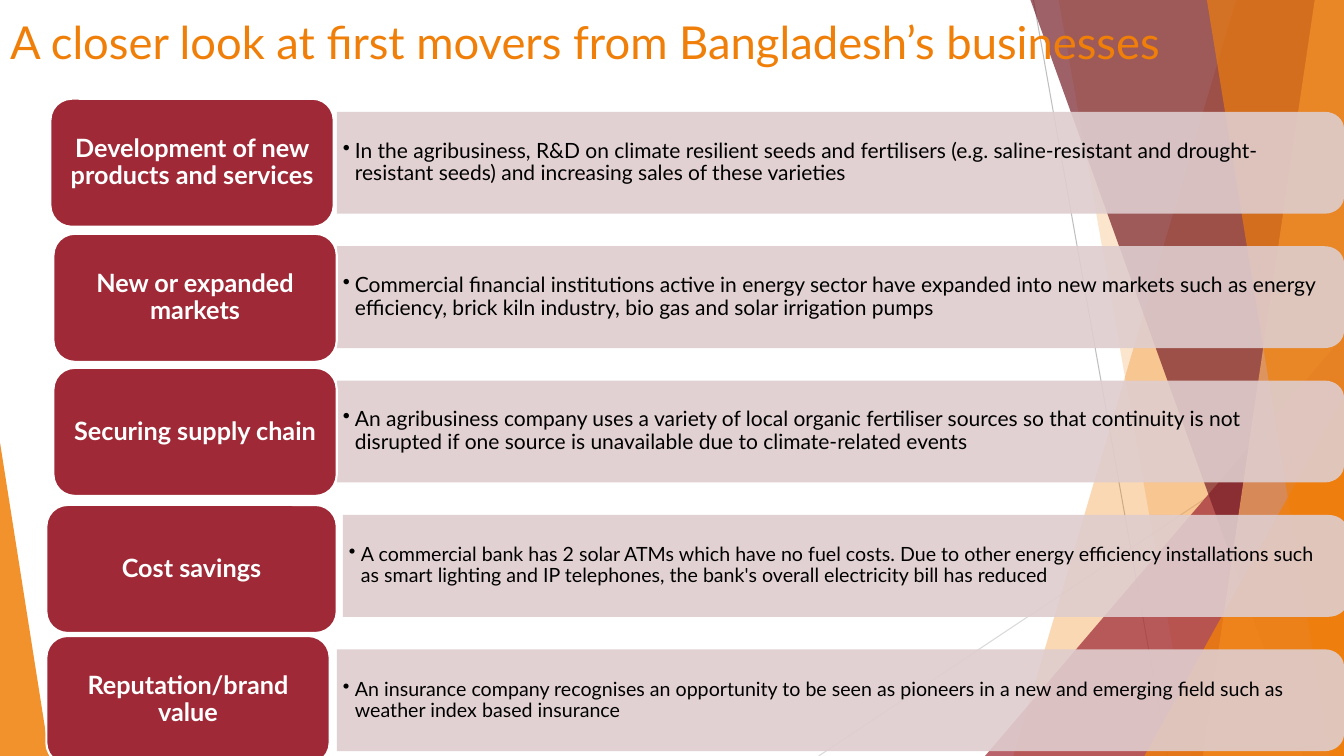
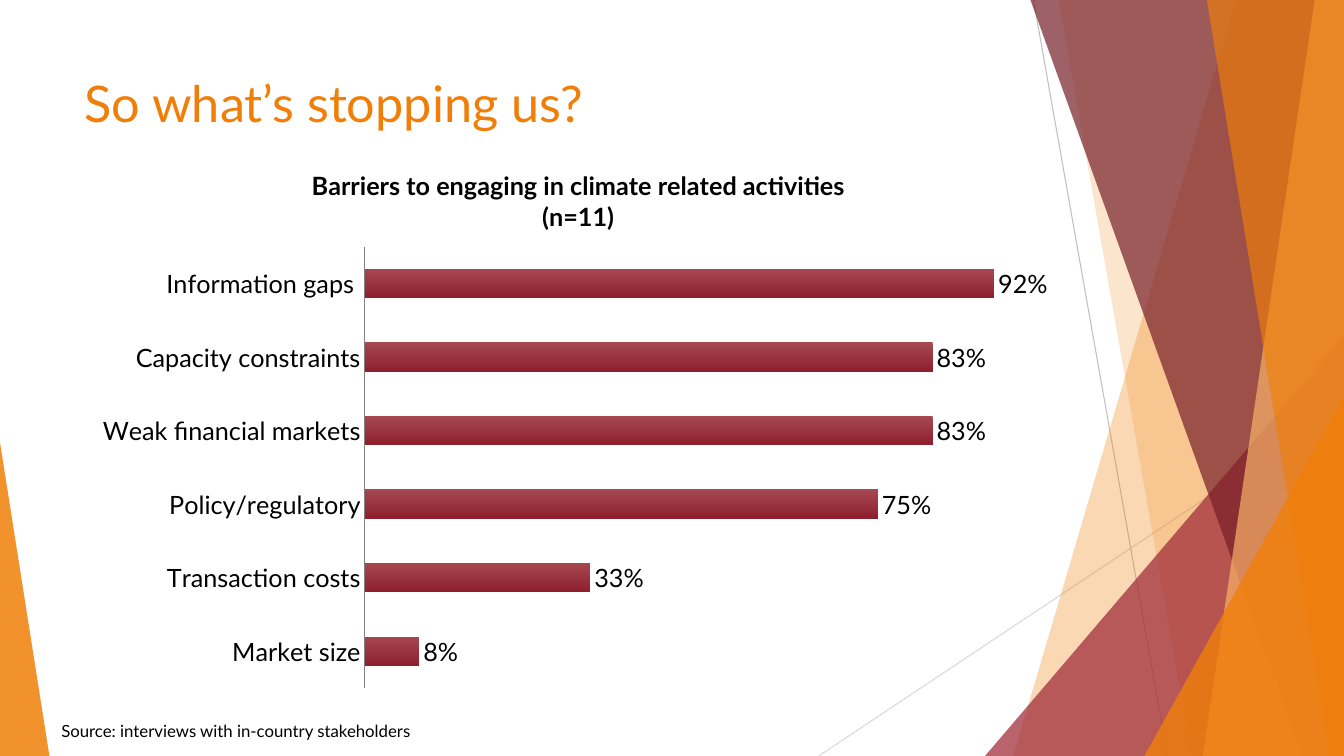
"""Build two slides on climate action by businesses in Bangladesh."""
from math import cos, pi, sin

from lxml.etree import SubElement
from pptx import Presentation
from pptx.chart.data import CategoryChartData
from pptx.dml.color import RGBColor
from pptx.enum.chart import XL_CHART_TYPE, XL_LABEL_POSITION, XL_TICK_MARK
from pptx.enum.shapes import MSO_CONNECTOR, MSO_SHAPE
from pptx.enum.text import MSO_ANCHOR, MSO_AUTO_SIZE, PP_ALIGN
from pptx.oxml import parse_xml
from pptx.oxml.ns import nsdecls, qn
from pptx.util import Inches, Pt

ORANGE = RGBColor(0xF0, 0x7F, 0x09)
PALE_ORANGE = RGBColor(0xF9, 0xB2, 0x68)
RED = RGBColor(0x9F, 0x29, 0x36)
DARK_RED = RGBColor(0x77, 0x1F, 0x28)
BAR_TOP = RGBColor(0xA6, 0x48, 0x51)
BAR_BOTTOM = RGBColor(0x8E, 0x1F, 0x2C)
PINK = RGBColor(0xDF, 0xCD, 0xCE)
LIGHT_GREY = RGBColor(0xD9, 0xD9, 0xD9)
MID_GREY = RGBColor(0xBF, 0xBF, 0xBF)
AXIS_GREY = RGBColor(0x80, 0x80, 0x80)
BLACK = RGBColor(0, 0, 0)
WHITE = RGBColor(0xFF, 0xFF, 0xFF)
FONT = "Lato"

TITLE_FRAME = {"word_wrap": True, "auto_size": MSO_AUTO_SIZE.NONE,
               "vertical_anchor": MSO_ANCHOR.TOP}
BAND_FRAME = {"word_wrap": True, "vertical_anchor": MSO_ANCHOR.MIDDLE,
              "margin_left": Inches(0.06), "margin_right": Inches(0.11),
              "margin_top": Inches(0.08), "margin_bottom": Inches(0.08)}
LABEL_FRAME = {"word_wrap": True, "vertical_anchor": MSO_ANCHOR.MIDDLE,
               "margin_left": Inches(0.08), "margin_right": Inches(0.08),
               "margin_top": Inches(0.04), "margin_bottom": Inches(0.04)}


def apply(obj, fmt, colour=None):
    """Set each attribute in fmt, and the font colour if one is given."""
    for name, value in fmt.items():
        setattr(obj, name, value)
    if colour is not None:
        obj.color.rgb = colour


def polygon(shapes, points, colour, opacity):
    """Draw a closed, translucent outline through points given in inches."""
    points = [(Inches(x), Inches(y)) for x, y in points]
    builder = shapes.build_freeform(*points[0])
    builder.add_line_segments(points[1:], close=True)
    sp = builder.convert_to_shape()
    sp.shadow.inherit = False
    sp.fill.solid()
    sp.fill.fore_color.rgb = colour
    sp.line.fill.background()
    clr = sp.element.spPr.find(qn("a:solidFill")).find(qn("a:srgbClr"))
    SubElement(clr, qn("a:alpha")).set("val", str(opacity * 1000))
    return sp


prs = Presentation()
prs.slide_width, prs.slide_height = Inches(13.33), Inches(7.5)
layout = prs.slide_layouts[5]
movers = prs.slides.add_slide(layout)
barriers = prs.slides.add_slide(layout)

decor = []
for x1, y1, x2, y2, colour in [(8.12, 7.5, 13.33, 4.03, LIGHT_GREY),
                               (10.25, 0, 11.58, 7.5, MID_GREY)]:
    line = movers.shapes.add_connector(
        MSO_CONNECTOR.STRAIGHT, Inches(x1), Inches(y1), Inches(x2), Inches(y2))
    line.line.color.rgb = colour
    line.line.width = Pt(0.75)
    SubElement(line.element.spPr, qn("a:effectLst"))
    decor.append(line)

for points, colour, opacity in [
    ([(12.26, 0), (10.05, 7.5), (13.33, 7.5), (13.33, 0)], ORANGE, 30),
    ([(10.5, 0), (11.82, 7.5), (13.33, 7.5), (13.33, 0)], ORANGE, 20),
    ([(9.77, 7.5), (13.33, 3.33), (13.33, 7.5)], RED, 72),
    ([(10.22, 0), (12.92, 7.5), (13.33, 7.5), (13.33, 0)], DARK_RED, 70),
    ([(13.04, 0), (11.93, 7.5), (13.33, 7.5), (13.33, 0)], PALE_ORANGE, 70),
    ([(11.97, 0), (13.19, 7.5), (13.33, 7.5), (13.33, 0)], ORANGE, 65),
    ([(11.35, 7.5), (13.33, 3.93), (13.33, 7.5)], ORANGE, 80),
    ([(0, 4.39), (0.49, 7.5), (0, 7.5)], ORANGE, 85),
]:
    decor.append(polygon(movers.shapes, points, colour, opacity))

master_tree = prs.slide_master.shapes.element
for i, sp in enumerate(decor):
    sp.element.xpath(".//p:cNvPr")[0].set("id", str(100 + i))
    master_tree.insert(2 + i, sp.element)

for s, text, size, box in [
    (movers, "A closer look at first movers from Bangladesh’s businesses",
     32.4, (0, 0.09, 12.47, 1.06)),
    (barriers, "So what’s stopping us?", 36, (0.74, 0.67, 9.4, 1.44)),
]:
    title = s.shapes.title
    title.left, title.top, title.width, title.height = map(Inches, box)
    tf = title.text_frame
    apply(tf, TITLE_FRAME)
    p = tf.paragraphs[0]
    p.alignment = PP_ALIGN.LEFT
    r = p.add_run()
    r.text = text
    apply(r.font, {"name": FONT, "size": Pt(size)}, ORANGE)

BAND_TOP, BAND_PITCH, BAND_HEIGHT = 1.11, 1.333, 1.01
CORNER_W, CORNER_H = 0.19, 0.17
rows = [
    ("Development of new products and services", 0.5, 0.98, 2.81, 3.34, 13.33, 15,
     "In the agribusiness, R&D on climate resilient seeds and fertilisers (e.g. "
     "saline-resistant and drought-resistant seeds) and increasing sales of these "
     "varieties"),
    ("New or expanded markets", 0.53, 2.32, 2.81, 3.34, 13.33, 15,
     "Commercial financial institutions active in energy sector have expanded into "
     "new markets such as energy efficiency, brick kiln industry, bio gas and solar "
     "irrigation pumps"),
    ("Securing supply chain", 0.53, 3.65, 2.81, 3.34, 13.33, 15,
     "An agribusiness company uses a variety of local organic fertiliser sources so "
     "that continuity is not disrupted if one source is unavailable due to "
     "climate-related events"),
    ("Cost savings", 0.46, 5.01, 2.88, 3.4, 13.37, 14,
     "A commercial bank has 2 solar ATMs which have no fuel costs. Due to other "
     "energy efficiency installations such as smart lighting and IP telephones, the "
     "bank's overall electricity bill has reduced"),
    ("Reputation/brand value", 0.46, 6.31, 2.81, 3.34, 13.33, 14,
     "An insurance company recognises an opportunity to be seen as pioneers in a new "
     "and emerging field such as weather index based insurance"),
]
for i, (name, x, y, width, left, right, size, detail) in enumerate(rows):
    top = BAND_TOP + i * BAND_PITCH
    bottom = top + BAND_HEIGHT
    arc = [(CORNER_W * (1 - sin(k * pi / 16)), CORNER_H * (1 - cos(k * pi / 16)))
           for k in range(9)]
    outline = [(left, top)]
    outline += [(right - dx, top + dy) for dx, dy in arc]
    outline += [(right - dx, bottom - dy) for dx, dy in reversed(arc)]
    outline += [(left, bottom)]
    band = polygon(movers.shapes, outline, PINK, 90)

    label = movers.shapes.add_shape(
        MSO_SHAPE.ROUNDED_RECTANGLE, Inches(x), Inches(y), Inches(width), Inches(1.27))
    label.shadow.inherit = False
    label.fill.solid()
    label.fill.fore_color.rgb = RED
    label.line.color.rgb = WHITE
    label.line.width = Pt(1.5)

    for sp, text, frame, align, font, colour in [
        (band, detail, BAND_FRAME, PP_ALIGN.LEFT, {"size": Pt(size)}, BLACK),
        (label, name, LABEL_FRAME, PP_ALIGN.CENTER,
         {"size": Pt(18), "bold": True}, WHITE),
    ]:
        apply(sp.text_frame, frame)
        p = sp.text_frame.paragraphs[0]
        apply(p, {"alignment": align, "line_spacing": 0.9})
        r = p.add_run()
        r.text = text
        apply(r.font, {"name": FONT, **font}, colour)

    pPr = band.text_frame.paragraphs[0]._p.get_or_add_pPr()
    pPr.set("marL", str(Inches(0.12)))
    pPr.set("indent", str(-Inches(0.12)))
    SubElement(pPr, qn("a:buChar")).set("char", "•")

data = CategoryChartData(number_format="0%")
data.categories = ["Market size", "Transaction costs", "Policy/regulatory",
                   "Weak financial markets", "Capacity constraints",
                   "Information gaps "]
data.add_series("Series 1", (0.08, 0.33, 0.75, 0.83, 0.83, 0.92))
chart = barriers.shapes.add_chart(
    XL_CHART_TYPE.BAR_CLUSTERED, Inches(0.83), Inches(1.48), Inches(9.81),
    Inches(5.45), data).chart
chart.has_legend = False
apply(chart.font, {"name": FONT, "size": Pt(10)}, BLACK)

chart.has_title = True
chart.chart_title.include_in_layout = False
tf = chart.chart_title.text_frame
for i, text in enumerate(["Barriers to engaging in climate related activities",
                          "(n=11)"]):
    p = tf.add_paragraph() if i else tf.paragraphs[0]
    r = p.add_run()
    r.text = text
    apply(r.font, {"name": FONT, "size": Pt(18), "bold": True}, BLACK)

apply(chart.value_axis, {"visible": False, "has_major_gridlines": False,
                         "minimum_scale": 0, "maximum_scale": 1})
axis = chart.category_axis
apply(axis, {"major_tick_mark": XL_TICK_MARK.NONE,
             "minor_tick_mark": XL_TICK_MARK.NONE, "has_major_gridlines": False})
axis.format.line.color.rgb = AXIS_GREY
apply(axis.tick_labels.font, {"name": FONT, "size": Pt(18)}, BLACK)

plot = chart.plots[0]
apply(plot, {"gap_width": 150, "overlap": -25, "vary_by_categories": False,
             "has_data_labels": True})
apply(plot.data_labels, {"show_value": True, "number_format": "0%",
                         "number_format_is_linked": False,
                         "position": XL_LABEL_POSITION.OUTSIDE_END})
apply(plot.data_labels.font, {"name": FONT, "size": Pt(18)}, BLACK)
fill = plot.series[0].format.fill
fill.gradient()
fill.gradient_angle = 270
for stop, colour in zip(fill.gradient_stops, (BAR_TOP, BAR_BOTTOM)):
    stop.color.rgb = colour

plot_area = chart.element.chart.plotArea
for old in plot_area.findall(qn("c:layout")):
    plot_area.remove(old)
plot_area.insert(0, parse_xml(
    f'<c:layout {nsdecls("c")}><c:manualLayout><c:layoutTarget val="inner"/>'
    '<c:xMode val="edge"/><c:yMode val="edge"/><c:x val="0.284"/><c:y val="0.178"/>'
    '<c:w val="0.692"/><c:h val="0.803"/></c:manualLayout></c:layout>'))

source = barriers.shapes.add_textbox(Inches(0.51), Inches(7.1), Inches(6.13), Inches(0.3))
source.text_frame.word_wrap = True
r = source.text_frame.paragraphs[0].add_run()
r.text = "Source: interviews with in-country stakeholders"
apply(r.font, {"name": FONT, "size": Pt(12)}, BLACK)

prs.save("out.pptx")
